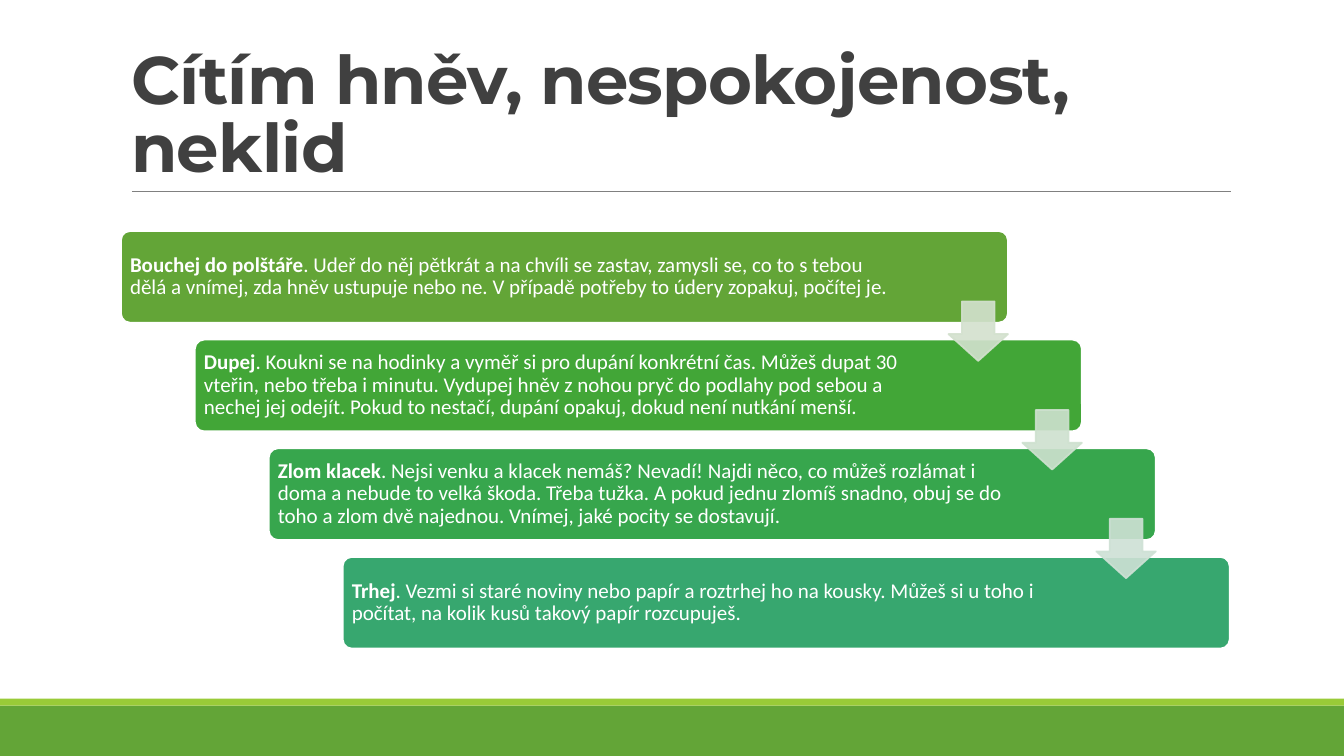
import pptx
import pptx.util
import pptx.dml.color
import pptx.enum.shapes
import pptx.enum.text
import pptx.oxml.ns
import lxml.etree

Pt = pptx.util.Pt
SHAPES = pptx.enum.shapes.MSO_SHAPE
ANCHOR = pptx.enum.text.MSO_ANCHOR
ALIGN = pptx.enum.text.PP_ALIGN

HEADING = "Cítím hněv, nespokojenost, neklid"
STEPS = [
    ("Bouchej do polštáře", ". Udeř do něj pětkrát a na chvíli se zastav, zamysli se, co to s tebou dělá a vnímej, "
     "zda hněv ustupuje nebo ne. V případě potřeby to údery zopakuj, počítej je.", "63A537", 76.5),
    ("Dupej", ". Koukni se na hodinky a vyměř si pro dupání konkrétní čas. Můžeš dupat 30 vteřin, nebo třeba i minutu. "
     "Vydupej hněv z nohou pryč do podlahy pod sebou a nechej jej odejít. Pokud to nestačí, dupání opakuj, "
     "dokud není nutkání menší.", "42A637", 99.5),
    ("Zlom klacek", ". Nejsi venku a klacek nemáš? Nevadí! Najdi něco, co můžeš rozlámat i doma a nebude to velká škoda. "
     "Třeba tužka. A pokud jednu zlomíš snadno, obuj se do toho a zlom dvě najednou. "
     "Vnímej, jaké pocity se dostavují.", "37A64D", 99.5),
    ("Trhej", ". Vezmi si staré noviny nebo papír a roztrhej ho na kousky. Můžeš si u toho i počítat, "
     "na kolik kusů takový papír rozcupuješ.", "37A76F", 99.5),
]
ARROW_COLORS = ["D3E1CE", "CEE1CF", "CEE1D5"]
BANDS = [(504, 36, "63A537"), (499, 5, "99CB38")]

SLIDE_W, SLIDE_H = 960, 540
STEP_LEFT, STEP_TOP, STEP_W, STEP_H = 86.4, 165, 633.6, 65.5
SHIFT_X, SHIFT_Y = 52.8, 77.6
ARROW_LEFT, ARROW_TOP, ARROW_SIZE = 677.5, 215.3, 42.5


def paint(color_format, color):
    color_format.rgb = pptx.dml.color.RGBColor.from_string(color)


def add_block(kind, left, top, width, height, fill, outline=None):
    block = slide.shapes.add_shape(kind, Pt(left), Pt(top), Pt(width), Pt(height))
    block.shadow.inherit = False
    block.fill.solid()
    paint(block.fill.fore_color, fill)
    if outline:
        paint(block.line.color, outline)
        block.line.width = Pt(1.25)
    else:
        block.line.fill.background()
    return block


def style_run(run, font, size, color, bold):
    run.font.name = font
    run.font.size = Pt(size)
    run.font.bold = bold
    paint(run.font.color, color)


deck = pptx.Presentation()
deck.slide_width, deck.slide_height = Pt(SLIDE_W), Pt(SLIDE_H)
slide = deck.slides.add_slide(deck.slide_layouts[5])

for top, height, color in BANDS:
    add_block(SHAPES.RECTANGLE, 0, top, SLIDE_W, height, color)

rule = slide.shapes.add_connector(pptx.enum.shapes.MSO_CONNECTOR.STRAIGHT, Pt(94.3), Pt(136.8), Pt(879), Pt(136.8))
paint(rule.line.color, "808080")
rule.line.width = Pt(0.5)
lxml.etree.SubElement(rule._element.spPr, pptx.oxml.ns.qn("a:effectLst"))

heading = slide.shapes.title
heading.left, heading.top, heading.width, heading.height = Pt(86.4), Pt(22.5), Pt(792), Pt(114.3)
heading.text_frame.text = HEADING
heading.text_frame.word_wrap = True
heading.text_frame.auto_size = pptx.enum.text.MSO_AUTO_SIZE.NONE
heading.text_frame.vertical_anchor = ANCHOR.BOTTOM
heading_line = heading.text_frame.paragraphs[0]
heading_line.alignment = ALIGN.LEFT
heading_line.line_spacing = 0.85
style_run(heading_line.runs[0], "Montserrat", 48, "404040", True)
heading_line.runs[0].font._element.set("spc", "-50")

for index, (action, advice, color, right_inset) in enumerate(STEPS):
    step = add_block(SHAPES.ROUNDED_RECTANGLE, STEP_LEFT + index * SHIFT_X, STEP_TOP + index * SHIFT_Y,
                     STEP_W, STEP_H, color, "FFFFFF")
    step.adjustments[0] = 0.1
    frame = step.text_frame
    frame.word_wrap = True
    frame.vertical_anchor = ANCHOR.MIDDLE
    frame.margin_left, frame.margin_right = Pt(4.6), Pt(right_inset)
    frame.margin_top = frame.margin_bottom = Pt(4.5)
    paragraph = frame.paragraphs[0]
    paragraph.alignment = ALIGN.LEFT
    paragraph.line_spacing = 0.9
    for words, bold in ((action, True), (advice, False)):
        run = paragraph.add_run()
        run.text = words
        style_run(run, "Calibri", 15, "FFFFFF", bold)

for index, color in enumerate(ARROW_COLORS):
    arrow = add_block(SHAPES.DOWN_ARROW, ARROW_LEFT + index * SHIFT_X, ARROW_TOP + index * SHIFT_Y,
                      ARROW_SIZE, ARROW_SIZE, color, color)
    arrow.adjustments[0], arrow.adjustments[1] = 0.55, 0.45
    for tint in arrow._element.spPr.iter(pptx.oxml.ns.qn("a:srgbClr")):
        lxml.etree.SubElement(tint, pptx.oxml.ns.qn("a:alpha")).set("val", "90000")

deck.save("out.pptx")
